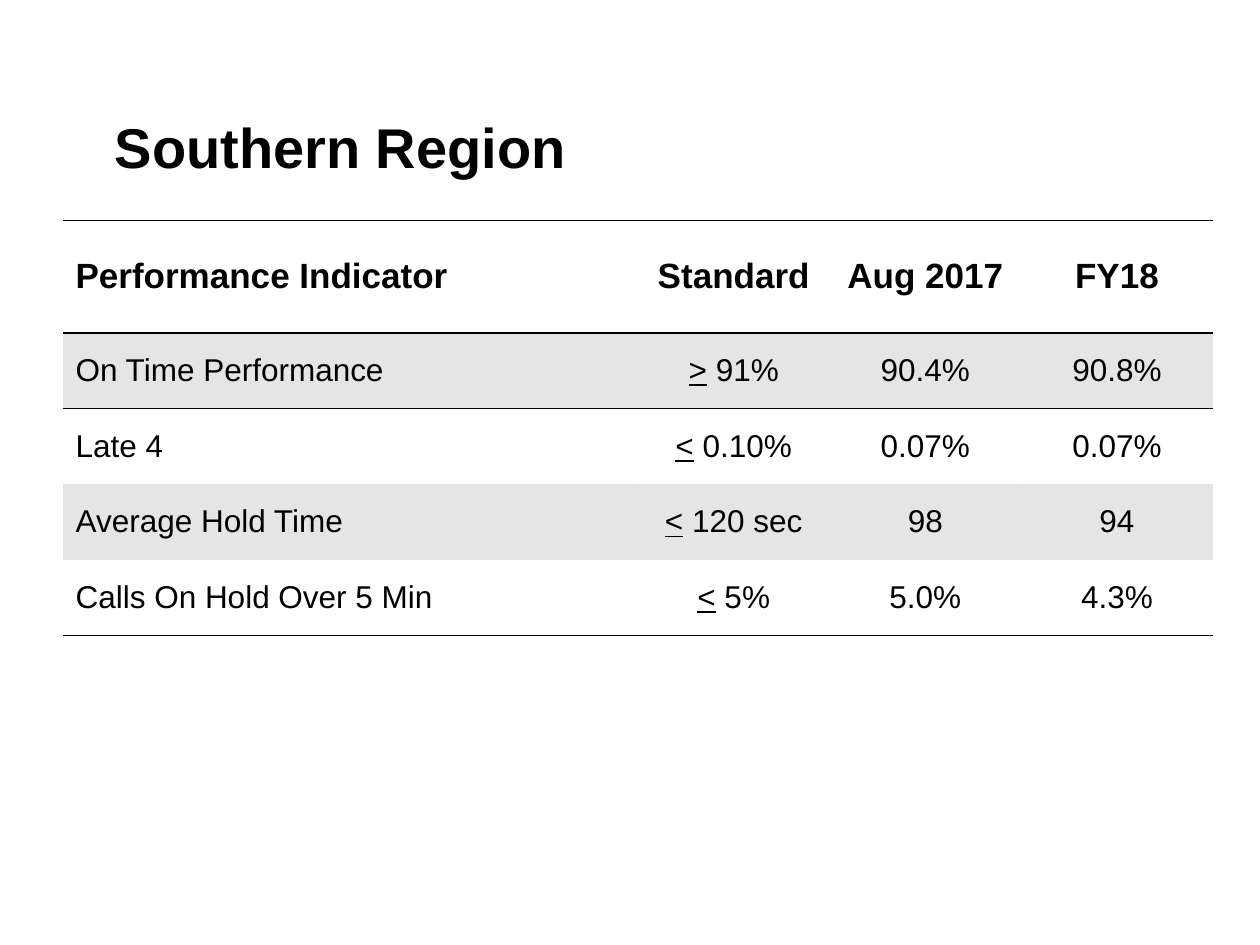
from lxml.etree import SubElement
from pptx import Presentation
from pptx.dml.color import RGBColor
from pptx.enum.text import MSO_ANCHOR, PP_ALIGN
from pptx.oxml import parse_xml
from pptx.oxml.ns import nsdecls, qn
from pptx.util import Cm, Pt

BLACK = "000000"
BAND = "808080"
BAND_ALPHA = 20
NO_GRID_STYLE = "{2D5ABB26-0587-4C30-8999-92F81FD0307C}"
TITLE_BOX = (2.06, 2.13, 21.31, 1.63)
TABLE_BOX = (1.27, 4.45, 23.18, 8.36)
HEADER_HEIGHT = 2.26
COLUMN_SHARES = (3, 1, 1, 1)
HEADINGS = ("Performance Indicator", "Standard", "Aug 2017", "FY18")
RESULTS = (
    ("On Time Performance", "> 91%", "90.4%", "90.8%"),
    ("Late 4", "< 0.10%", "0.07%", "0.07%"),
    ("Average Hold Time", "< 120 sec", "98", "94"),
    ("Calls On Hold Over 5 Min", "< 5%", "5.0%", "4.3%"),
)
TITLE_FORMAT = {"name": "Arial", "size": Pt(32), "bold": True}
HEADING_FORMAT = {"name": "Arial", "size": Pt(20), "bold": True}
RESULT_FORMAT = {"name": "Arial", "size": Pt(18), "bold": False}


def paint(color_format, hex_color):
    color_format.rgb = RGBColor.from_string(hex_color)


def write_run(paragraph, text, font_format, underline=False):
    run = paragraph.add_run()
    run.text = text
    for attribute, value in font_format.items():
        setattr(run.font, attribute, value)
    if underline:
        run.font.underline = True
    paint(run.font.color, BLACK)


def place_title(slide, box, text):
    title = slide.shapes.title
    title.left, title.top, title.width, title.height = map(Cm, box)
    title.text_frame.vertical_anchor = MSO_ANCHOR.MIDDLE
    paragraph = title.text_frame.paragraphs[0]
    paragraph.alignment = PP_ALIGN.LEFT
    write_run(paragraph, text, TITLE_FORMAT)


def rule_cell(cell, sides):
    properties = cell._tc.get_or_add_tcPr()
    for position, side in enumerate(sides):
        rule = parse_xml(
            f'<a:{side} {nsdecls("a")} w="{Pt(1)}"><a:solidFill>'
            f'<a:srgbClr val="{BLACK}"/></a:solidFill></a:{side}>'
        )
        properties.insert(position, rule)


def shade_cell(cell):
    cell.fill.solid()
    paint(cell.fill.fore_color, BAND)
    color = cell._tc.tcPr.find(qn("a:solidFill")).find(qn("a:srgbClr"))
    SubElement(color, qn("a:alpha"), val=str(BAND_ALPHA * 1000))


def fill_cell(cell, text, font_format, centred):
    cell.vertical_anchor = MSO_ANCHOR.MIDDLE
    paragraph = cell.text_frame.paragraphs[0]
    paragraph.alignment = PP_ALIGN.CENTER if centred else PP_ALIGN.LEFT
    if text[0] in "<>":
        write_run(paragraph, text[0], font_format, underline=True)
        text = text[1:]
    write_run(paragraph, text, font_format)


def place_results(slide, box, headings, results):
    left, top, width, height = box
    last = len(results)
    frame = slide.shapes.add_table(last + 1, len(headings), *map(Cm, box))
    table = frame.table
    table.first_row = table.horz_banding = False
    table._tbl.tblPr.find(qn("a:tableStyleId")).text = NO_GRID_STYLE

    for column, share in zip(table.columns, COLUMN_SHARES):
        column.width = Cm(width * share / sum(COLUMN_SHARES))
    for index, row in enumerate(table.rows):
        row.height = Cm((height - HEADER_HEIGHT) / last if index else HEADER_HEIGHT)

    for r, texts in enumerate((headings, *results)):
        font_format = RESULT_FORMAT if r else HEADING_FORMAT
        for c, text in enumerate(texts):
            cell = table.cell(r, c)
            fill_cell(cell, text, font_format, centred=c > 0)
            if r % 2:
                shade_cell(cell)
            else:
                cell.fill.background()
            if r == 0:
                rule_cell(cell, ("lnT", "lnB"))
            elif r == 1:
                rule_cell(cell, ("lnT",))
            elif r == last:
                rule_cell(cell, ("lnB",))


def main():
    presentation = Presentation()
    presentation.slide_width, presentation.slide_height = Cm(25.4), Cm(19.05)
    slide = presentation.slides.add_slide(presentation.slide_layouts[5])
    place_title(slide, TITLE_BOX, "Southern Region")
    place_results(slide, TABLE_BOX, HEADINGS, RESULTS)
    presentation.save("out.pptx")


if __name__ == "__main__":
    main()
